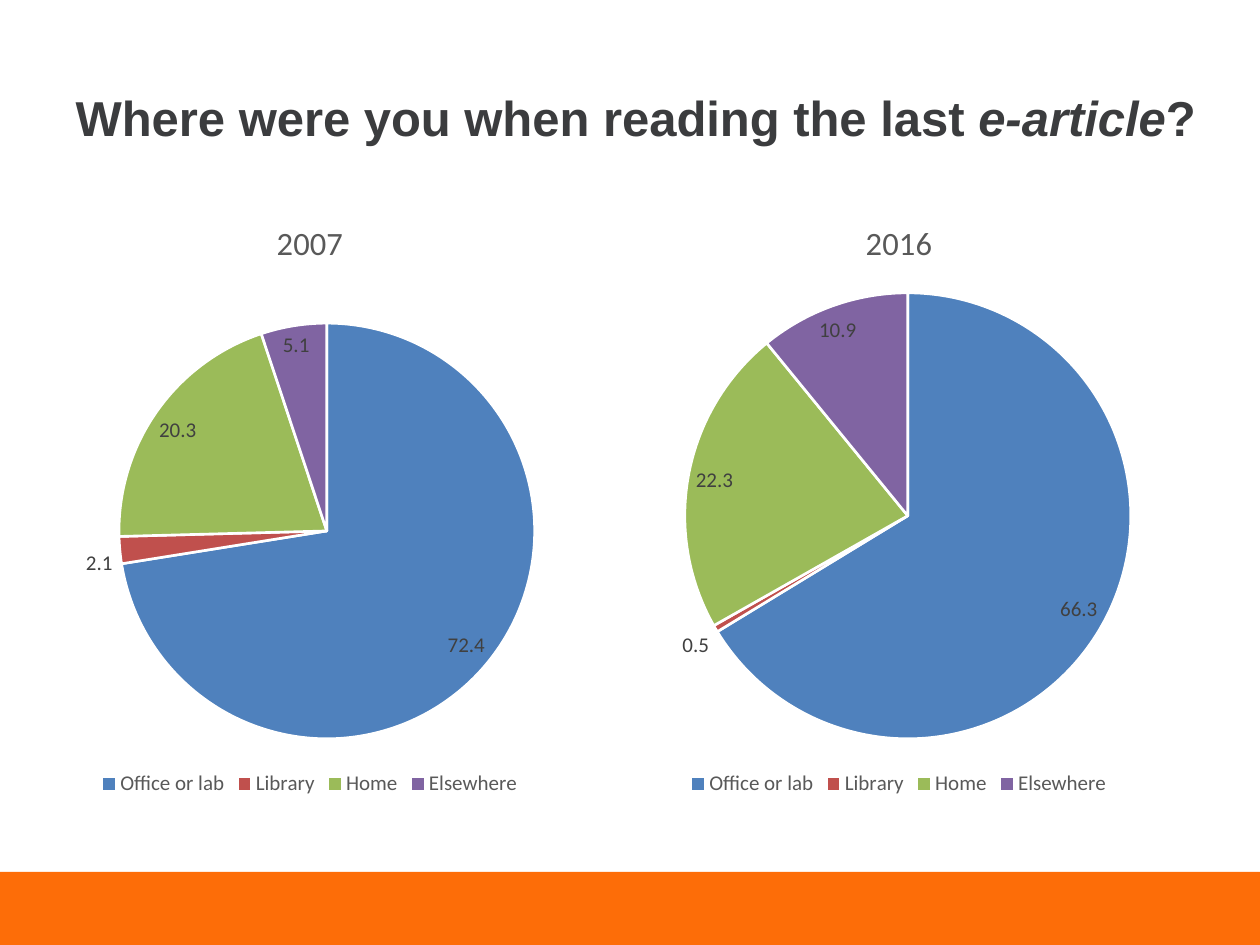
from dataclasses import dataclass

from lxml import etree
from pptx import Presentation
from pptx.chart.data import CategoryChartData
from pptx.dml.color import RGBColor
from pptx.enum import chart as ch, shapes, text
from pptx.oxml.ns import qn
from pptx.util import Inches, Pt

W, H = Inches(10), Inches(7.5)
WHITE = RGBColor(0xFF, 0xFF, 0xFF)
ORANGE = RGBColor(0xFD, 0x6D, 0x08)
TITLE_INK = RGBColor(0x3B, 0x3C, 0x3E)
GREY = RGBColor(0x59, 0x59, 0x59)
LABEL_INK = RGBColor(0x40, 0x40, 0x40)
SLICES = (RGBColor(0x4F, 0x81, 0xBD), RGBColor(0xC0, 0x50, 0x4D),
          RGBColor(0x9B, 0xBB, 0x59), RGBColor(0x80, 0x64, 0xA2))
PLACES = ("Office or lab", "Library", "Home", "Elsewhere")
CHART_TOP, CHART_HEIGHT = 1.55 / 7.5, 4.81 / 7.5


@dataclass
class Pie:
    """A survey year; left and width are shares of the slide, plot of the chart."""
    year: str
    series: str
    values: tuple[float, ...]
    left: float
    width: float
    plot: dict[str, float]


PIES = (
    Pie("2007", "Series 1", (72.4, 2.1, 20.3, 5.1), -0.04, 0.572,
        {"x": 0.235, "y": 0.211, "w": 0.577, "h": 0.686}),
    Pie("2016", "2016", (66.3, 0.5, 22.3, 10.9), 0.38, 0.667,
        {"x": 0.245, "y": 0.161, "w": 0.531, "h": 0.736}),
)


def style_font(font, size: float, color: RGBColor, name: str = "Calibri") -> None:
    font.name, font.size, font.bold = name, Pt(size), False
    font.color.rgb = color


def place_plot(chart, plot: dict[str, float]) -> None:
    """Fix the pie's inner plot area within its chart."""
    area = chart._chartSpace.chart.plotArea
    for old in area.findall(qn("c:layout")):
        area.remove(old)
    layout = etree.Element(qn("c:layout"))
    manual = etree.SubElement(layout, qn("c:manualLayout"))
    settings = {"layoutTarget": "inner", "xMode": "edge", "yMode": "edge", **plot}
    for tag, val in settings.items():
        etree.SubElement(manual, qn(f"c:{tag}")).set("val", str(val))
    area.insert(0, layout)


def add_pie(s, pie: Pie) -> None:
    data = CategoryChartData(number_format="General")
    data.categories = PLACES
    data.add_series(pie.series, pie.values)
    chart = s.shapes.add_chart(
        ch.XL_CHART_TYPE.PIE, int(W * pie.left), int(H * CHART_TOP),
        int(W * pie.width), int(H * CHART_HEIGHT), data).chart
    style_font(chart.font, 10, RGBColor(0, 0, 0))

    # Year above, legend below
    chart.has_title = True
    r = chart.chart_title.text_frame.paragraphs[0].add_run()
    r.text = pie.year
    style_font(r.font, 18.6, GREY)
    chart.chart_title.include_in_layout = False
    chart.has_legend = True
    chart.legend.position = ch.XL_LEGEND_POSITION.BOTTOM
    chart.legend.include_in_layout = False
    style_font(chart.legend.font, 12, GREY)

    # Slices and their values
    plot = chart.plots[0]
    plot.vary_by_categories = True
    for i, color in enumerate(SLICES):
        fmt = plot.series[0].points[i].format
        fmt.fill.solid()
        fmt.fill.fore_color.rgb = color
        fmt.line.color.rgb = WHITE
        fmt.line.width = Pt(1.5)
    labels = plot.series[0].data_labels
    labels.show_value = True
    labels.show_percentage = False
    labels.position = ch.XL_LABEL_POSITION.BEST_FIT
    style_font(labels.font, 12, LABEL_INK)
    place_plot(chart, pie.plot)


def add_title(s) -> None:
    sp = s.shapes.title
    sp.left, sp.top, sp.width, sp.height = map(Inches, (0.5, 0.3, 9.17, 1.25))
    tf = sp.text_frame
    tf.vertical_anchor = text.MSO_ANCHOR.MIDDLE
    p = tf.paragraphs[0]
    p.alignment = text.PP_ALIGN.LEFT
    for words, italic in (("Where were you when reading the last ", False),
                          ("e-article", True), ("?", False)):
        r = p.add_run()
        r.text = words
        style_font(r.font, 28, TITLE_INK, "Arial")
        r.font.bold, r.font.italic = True, italic


def add_footer_band(s) -> None:
    top = Inches(6.92)
    sp = s.shapes.add_shape(shapes.MSO_SHAPE.RECTANGLE, 0, top, W, H - top)
    sp.shadow.inherit = False
    sp.fill.solid()
    sp.fill.fore_color.rgb = ORANGE
    sp.line.fill.background()


def main() -> None:
    prs = Presentation()
    prs.slide_width, prs.slide_height = W, H
    s = prs.slides.add_slide(prs.slide_layouts[5])
    add_footer_band(s)
    add_title(s)
    for pie in PIES:
        add_pie(s, pie)
    prs.save("out.pptx")


if __name__ == "__main__":
    main()
